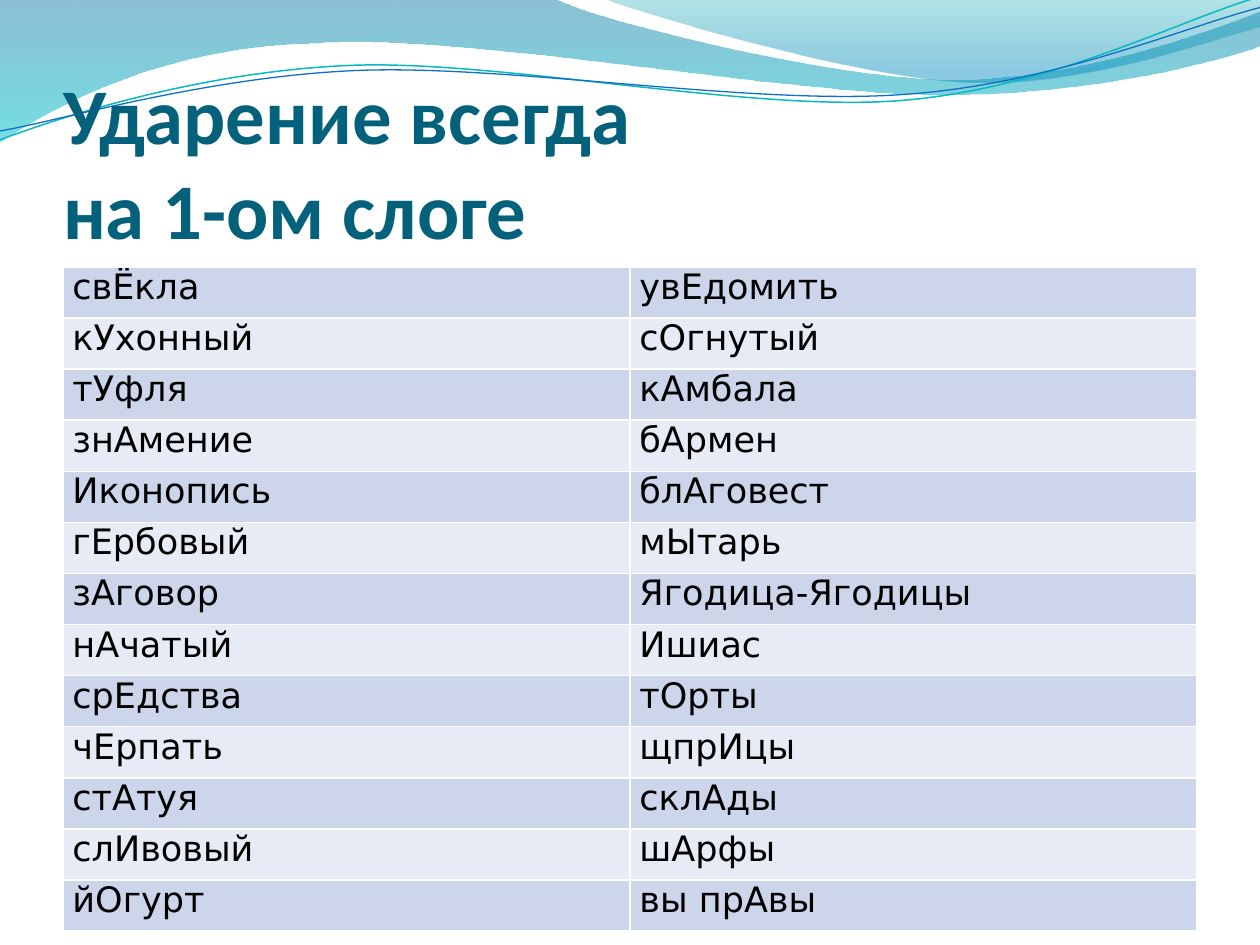
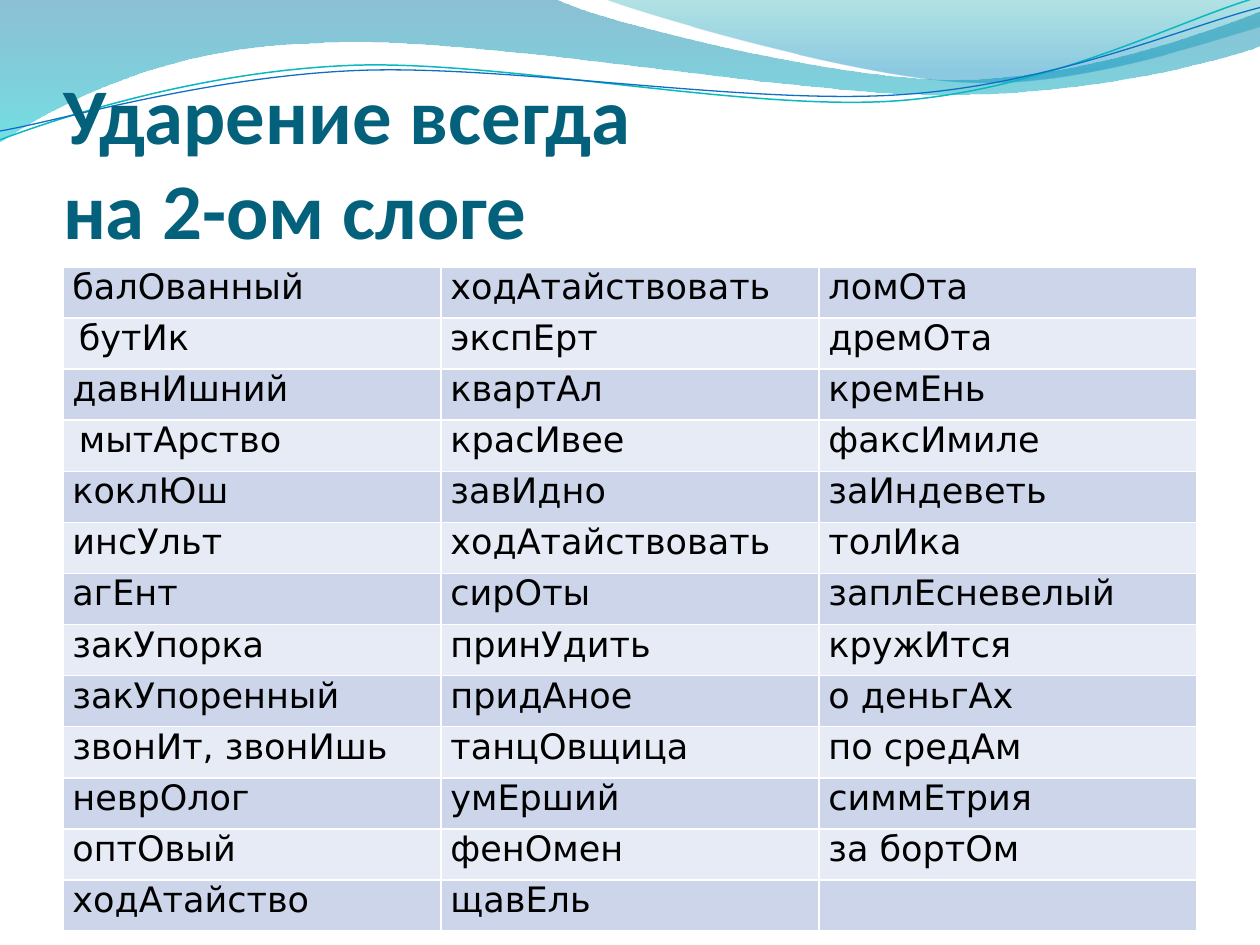
from pptx import Presentation
from pptx.dml.color import RGBColor
from pptx.enum.text import MSO_ANCHOR, MSO_AUTO_SIZE, PP_ALIGN
from pptx.oxml.ns import qn
from pptx.util import Cm, Pt
from lxml.etree import SubElement

COLORS = {
    "title": "04617B",
    "text": "000000",
    "odd_row": "CCD5EA",
    "even_row": "E7EBF5",
    "border": "FFFFFF",
    "deep_blue": "0074A1",
    "turquoise": "00C6CF",
    "teal": "00A1A9",
    "sky": "008BBF",
    "teal_line": "0AB8BF",
    "blue_line": "0F6FC6",
}
TITLE_FONT = "Calibri"
TABLE_FONT = "DejaVu Sans"
TITLE_BOX = (Cm(1.27), Cm(1.96), Cm(22.86), Cm(3.18))
TABLE_BOX = (Cm(1.27), Cm(5.38), Cm(22.86), Cm(13.39))
INCH = Cm(2.54)
UNITS_PER_INCH = 100

WIDE_WAVE = [
    [(0, 0)],
    [(4.4, -0.01)],
    [(4.76, 0.17), (6.64, 0.63), (7.58, 0.63)],
    [(8.53, 0.63), (9.58, 0.26), (10, 0.09)],
    [(10.01, 0.36)],
    [(9.83, 0.44), (8.7, 0.76), (7.46, 0.75)],
    [(6.22, 0.75), (3.82, 0.28), (2.57, 0.34)],
    [(1.29, 0.36), (0.46, 0.83), (-0.01, 1.13)],
]
RIGHT_WAVE = [
    [(4.79, -0.01)],
    [(5.09, 0.11), (6.82, 0.62), (7.69, 0.65)],
    [(8.56, 0.69), (9.61, 0.32), (10, 0.21)],
    [(10, 0)],
]
TEAL_CURVE = [
    [(0, 1.11)],
    [(0.48, 0.93), (1.58, 0.57), (2.77, 0.52)],
    [(3.95, 0.47), (5.93, 0.89), (7.13, 0.8)],
    [(8.33, 0.71), (9.38, 0.15), (9.98, -0.02)],
]
BLUE_CURVE = [
    [(0, 1.04)],
    [(0.47, 0.96), (1.64, 0.61), (2.83, 0.56)],
    [(4.03, 0.51), (5.97, 0.84), (7.17, 0.75)],
    [(8.36, 0.67), (9.41, 0.21), (10, 0.06)],
]

FIRST_SYLLABLE = [
    ["свЁкла", "кУхонный", "тУфля", "знАмение", "Иконопись", "гЕрбовый", "зАговор",
     "нАчатый", "срЕдства", "чЕрпать", "стАтуя", "слИвовый", "йОгурт"],
    ["увЕдомить", "сОгнутый", "кАмбала", "бАрмен", "блАговест", "мЫтарь", "Ягодица-Ягодицы",
     "Ишиас", "тОрты", "щпрИцы", "склАды", "шАрфы", "вы прАвы"],
]
SECOND_SYLLABLE = [
    ["балОванный", "бутИк", "давнИшний", "мытАрство", "коклЮш", "инсУльт", "агЕнт",
     "закУпорка", "закУпоренный", "звонИт, звонИшь", "неврОлог", "оптОвый", "ходАтайство"],
    ["ходАтайствовать", "экспЕрт", "квартАл", "красИвее", "завИдно", "ходАтайствовать", "сирОты",
     "принУдить", "придАное", "танцОвщица", "умЕрший", "фенОмен", "щавЕль"],
    ["ломОта", "дремОта", "кремЕнь", "факсИмиле", "заИндеветь", "толИка", "заплЕсневелый",
     "кружИтся", "о деньгАх", "по средАм", "симмЕтрия", "за бортОм", ""],
]
INDENTED_WORDS = {"бутИк", "мытАрство"}


def color(name):
    return RGBColor.from_string(COLORS[name])


def add_curve(slide, segments, closed):
    points = [(x * UNITS_PER_INCH, y * UNITS_PER_INCH) for segment in segments for x, y in segment]
    builder = slide.shapes.build_freeform(*points[0], scale=INCH / UNITS_PER_INCH)
    builder.add_line_segments(points[1:], close=closed)
    shape = builder.convert_to_shape()
    shape.shadow.inherit = False
    line_nodes = iter(list(shape.element.iter(qn("a:lnTo"))))
    for segment in segments[1:]:
        first, *others = [next(line_nodes) for _ in segment]
        if others:
            first.tag = qn("a:cubicBezTo")
        for node in others:
            first.append(node[0])
            node.getparent().remove(node)
    return shape


def add_wave(slide, segments, stops):
    wave = add_curve(slide, segments, True)
    wave.line.fill.background()
    wave.fill.gradient()
    wave.fill.gradient_angle = 270
    for stop, (position, name, _) in zip(wave.fill.gradient_stops, stops):
        stop.position = position
        stop.color.rgb = color(name)
    gradient = wave.element.spPr.find(qn("a:gradFill"))
    for node, (_, _, opacity) in zip(gradient.iter(qn("a:srgbClr")), stops):
        SubElement(node, qn("a:alpha"), val=str(opacity * 1000))
    return wave


def add_wave_line(slide, segments, name, width):
    curve = add_curve(slide, segments, False)
    curve.fill.background()
    curve.line.color.rgb = color(name)
    curve.line.width = Pt(width)
    return curve


def move_waves_to_layout(slide):
    waves = [
        add_wave(slide, WIDE_WAVE, [(0, "deep_blue", 45), (1, "turquoise", 55)]),
        add_wave(slide, RIGHT_WAVE, [(0, "teal", 30), (0.8, "sky", 45)]),
        add_wave_line(slide, TEAL_CURVE, "teal_line", 0.85),
        add_wave_line(slide, BLUE_CURVE, "blue_line", 0.75),
    ]
    layout_tree = slide.slide_layout.element.cSld.spTree
    for number, wave in enumerate(waves):
        wave.element.nvSpPr.cNvPr.set("id", str(100 + number))
        layout_tree.append(wave.element)


def format_run(run, font, size, name, bold=False):
    run.font.name = font
    run.font.size = Pt(size)
    run.font.bold = bold
    run.font.color.rgb = color(name)


def set_title(slide, lines, box):
    title = slide.shapes.title
    title.left, title.top, title.width, title.height = box
    frame = title.text_frame
    frame.auto_size = MSO_AUTO_SIZE.NONE
    frame.word_wrap = True
    frame.vertical_anchor = MSO_ANCHOR.BOTTOM
    frame.margin_left = frame.margin_right = frame.margin_bottom = 0
    frame.margin_top = Cm(0.13)
    paragraph = frame.paragraphs[0]
    paragraph.alignment = PP_ALIGN.LEFT
    for index, line in enumerate(lines):
        if index:
            paragraph.add_line_break()
        run = paragraph.add_run()
        run.text = line
        format_run(run, TITLE_FONT, 45, "title", True)


def add_borders(cell):
    properties = cell._tc.get_or_add_tcPr()
    for side in ("a:lnL", "a:lnR", "a:lnT", "a:lnB"):
        border = SubElement(properties, qn(side), w=str(Pt(1)))
        fill = SubElement(border, qn("a:solidFill"))
        SubElement(fill, qn("a:srgbClr"), val=COLORS["border"])


def fill_cell(cell, word, fill_name):
    add_borders(cell)
    cell.fill.solid()
    cell.fill.fore_color.rgb = color(fill_name)
    cell.margin_left = cell.margin_right = Cm(0.19)
    cell.margin_top = cell.margin_bottom = 0
    if not word:
        return
    paragraph = cell.text_frame.paragraphs[0]
    paragraph.alignment = PP_ALIGN.JUSTIFY
    if word in INDENTED_WORDS:
        paragraph._p.get_or_add_pPr().set("indent", str(Cm(0.13)))
    run = paragraph.add_run()
    run.text = word
    format_run(run, TABLE_FONT, 20, "text")


def add_word_table(slide, word_columns, box):
    left, top, width, height = box
    row_count, column_count = len(word_columns[0]), len(word_columns)
    table = slide.shapes.add_table(row_count, column_count, left, top, width, height).table
    table.first_row = False
    table.horz_banding = False
    for column_index, words in enumerate(word_columns):
        for row_index, word in enumerate(words):
            fill_name = "even_row" if row_index % 2 else "odd_row"
            fill_cell(table.cell(row_index, column_index), word, fill_name)


def add_stress_slide(presentation, title_lines, word_columns):
    slide = presentation.slides.add_slide(presentation.slide_layouts[5])
    set_title(slide, title_lines, TITLE_BOX)
    add_word_table(slide, word_columns, TABLE_BOX)
    return slide


def main():
    presentation = Presentation()
    presentation.slide_width = Cm(25.4)
    presentation.slide_height = Cm(19.05)
    first_slide = add_stress_slide(presentation, ["Ударение всегда", "на 1-ом слоге"], FIRST_SYLLABLE)
    move_waves_to_layout(first_slide)
    add_stress_slide(presentation, ["Ударение всегда", "на 2-ом слоге"], SECOND_SYLLABLE)
    presentation.save("out.pptx")


if __name__ == "__main__":
    main()
